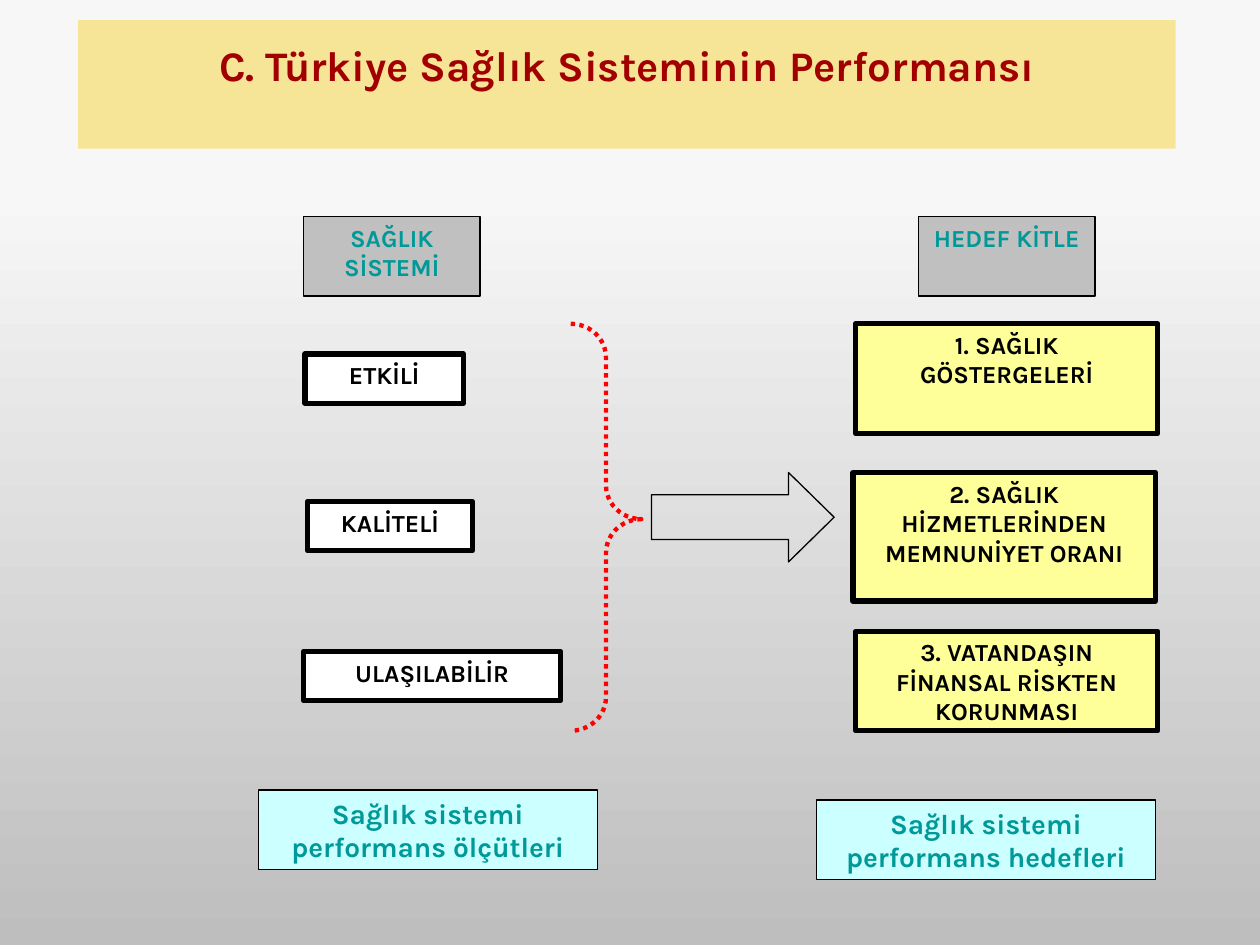
from pptx import Presentation
from pptx import util as u
from pptx.dml.color import RGBColor
from pptx.enum import dml, shapes, text

COLUMNS, ROWS = 100, 75
FONT = "Karla"
INK, TEAL, RED = "000000", "009999", "FF0000"
THIN, THICK = 0.75, 3

HEADING = {"fill": "C0C0C0", "line": THIN, "color": TEAL, "size": 14}
MEASURE = {"fill": "FFFFFF", "line": THICK, "color": INK, "size": 14}
GOAL = {**MEASURE, "fill": "FFFF99"}
CAPTION = {"fill": "CCFFFF", "line": THIN, "color": TEAL, "size": 16}


def rgb(value):
    return RGBColor.from_string(value)


class Diagram:
    """Draws on one slide; places are (left, top, width, height) in grid columns and rows."""

    def __init__(self, deck):
        self.column = deck.slide_width / COLUMNS
        self.row = deck.slide_height / ROWS
        self.slide = deck.slides.add_slide(deck.slide_layouts[5])

    def place(self, left, top, width, height):
        return [round(n) for n in (left * self.column, top * self.row,
                                   width * self.column, height * self.row)]

    def background(self, bottom, top, reach):
        """Fade upward from the bottom colour, reaching the top colour at a share of the height."""
        fill = self.slide.background.fill
        fill.gradient()
        fill.gradient_angle = 90
        for stop, color, position in zip(fill.gradient_stops, (bottom, top), (0, reach)):
            stop.color.rgb = rgb(color)
            stop.position = position

    def shape(self, kind, place, fill=None, line=None, line_color=INK, dash=None, adjust=()):
        shape = self.slide.shapes.add_shape(kind, *self.place(*place))
        shape.shadow.inherit = False
        if fill:
            shape.fill.solid()
            shape.fill.fore_color.rgb = rgb(fill)
        else:
            shape.fill.background()
        if line:
            shape.line.color.rgb = rgb(line_color)
            shape.line.width = u.Pt(line)
            if dash:
                shape.line.dash_style = dash
        else:
            shape.line.fill.background()
        for index, value in enumerate(adjust):
            shape.adjustments[index] = value
        return shape

    def label(self, shape, words, size, color):
        frame = shape.text_frame
        frame.text = words
        frame.word_wrap = True
        frame.auto_size = text.MSO_AUTO_SIZE.NONE
        frame.vertical_anchor = text.MSO_ANCHOR.TOP
        style = {"name": FONT, "size": u.Pt(size), "bold": True}
        for paragraph in frame.paragraphs:
            paragraph.alignment = text.PP_ALIGN.CENTER
            for run in paragraph.runs:
                for key, value in style.items():
                    setattr(run.font, key, value)
                run.font.color.rgb = rgb(color)

    def box(self, words, place, fill, line, color, size):
        box = self.shape(shapes.MSO_SHAPE.RECTANGLE, place, fill, line)
        self.label(box, words, size, color)

    def title(self, words, place, band_place, band_fill):
        band = self.shape(shapes.MSO_SHAPE.RECTANGLE, band_place, band_fill)
        title = self.slide.shapes.title
        title.left, title.top, title.width, title.height = self.place(*place)
        self.label(title, words, 24, "A20000")
        band.element.addnext(title.element)  # the title stands in front of its band


def main():
    deck = Presentation()
    deck.slide_width, deck.slide_height = u.Inches(10), u.Inches(7.5)
    diagram = Diagram(deck)
    diagram.background("BEBEBE", "F7F7F7", 0.8)
    diagram.title("C. Türkiye Sağlık Sisteminin Performansı",
                  (6.2, 2.6, 87.1, 5), (6.2, 1.6, 87.1, 10.2), "F7E597")

    for words, left in (("SAĞLIK\nSİSTEMİ", 24.1), ("HEDEF KİTLE", 72.9)):
        diagram.box(words, (left, 17.2, 14, 6.3), **HEADING)

    for words, left, top, width in (("ETKİLİ", 24.2, 28.1, 12.6),
                                    ("KALİTELİ", 24.4, 39.8, 13.1),
                                    ("ULAŞILABİLİR", 24.1, 51.7, 20.4)):
        diagram.box(words, (left, top, width, 3.9), **MEASURE)

    for words, left, top, height in (
            ("1. SAĞLIK GÖSTERGELERİ", 67.9, 25.7, 8.7),
            ("2. SAĞLIK HİZMETLERİNDEN MEMNUNİYET ORANI", 67.7, 37.5, 10.2),
            ("3. VATANDAŞIN FİNANSAL RİSKTEN KORUNMASI", 67.9, 50.1, 7.9)):
        diagram.box(words, (left, top, 24, height), **GOAL)

    for words, left, top in (("Sağlık sistemi performans ölçütleri", 20.5, 62.7),
                             ("Sağlık sistemi performans hedefleri", 64.8, 63.5)):
        diagram.box(words, (left, top, 26.9, 6.3), **CAPTION)

    diagram.shape(shapes.MSO_SHAPE.RIGHT_BRACE, (45.3, 25.7, 5.6, 32.3), line=2.5,
                  line_color=RED, dash=dml.MSO_LINE.ROUND_DOT, adjust=(0.48, 0.48))
    diagram.shape(shapes.MSO_SHAPE.RIGHT_ARROW, (51.7, 37.5, 14.5, 7.1), line=THIN,
                  adjust=(0.5, 0.51))
    deck.save("out.pptx")


if __name__ == "__main__":
    main()
